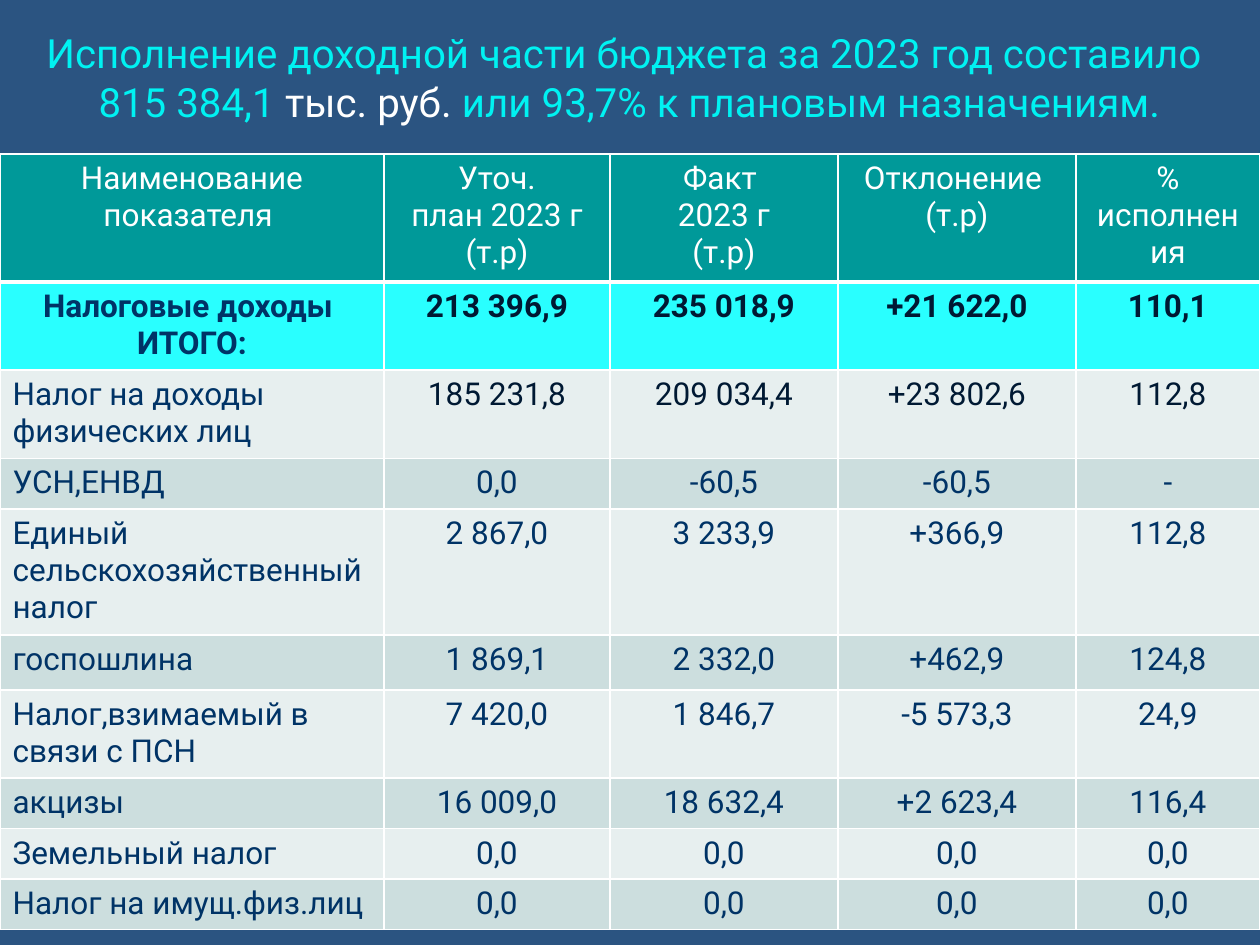
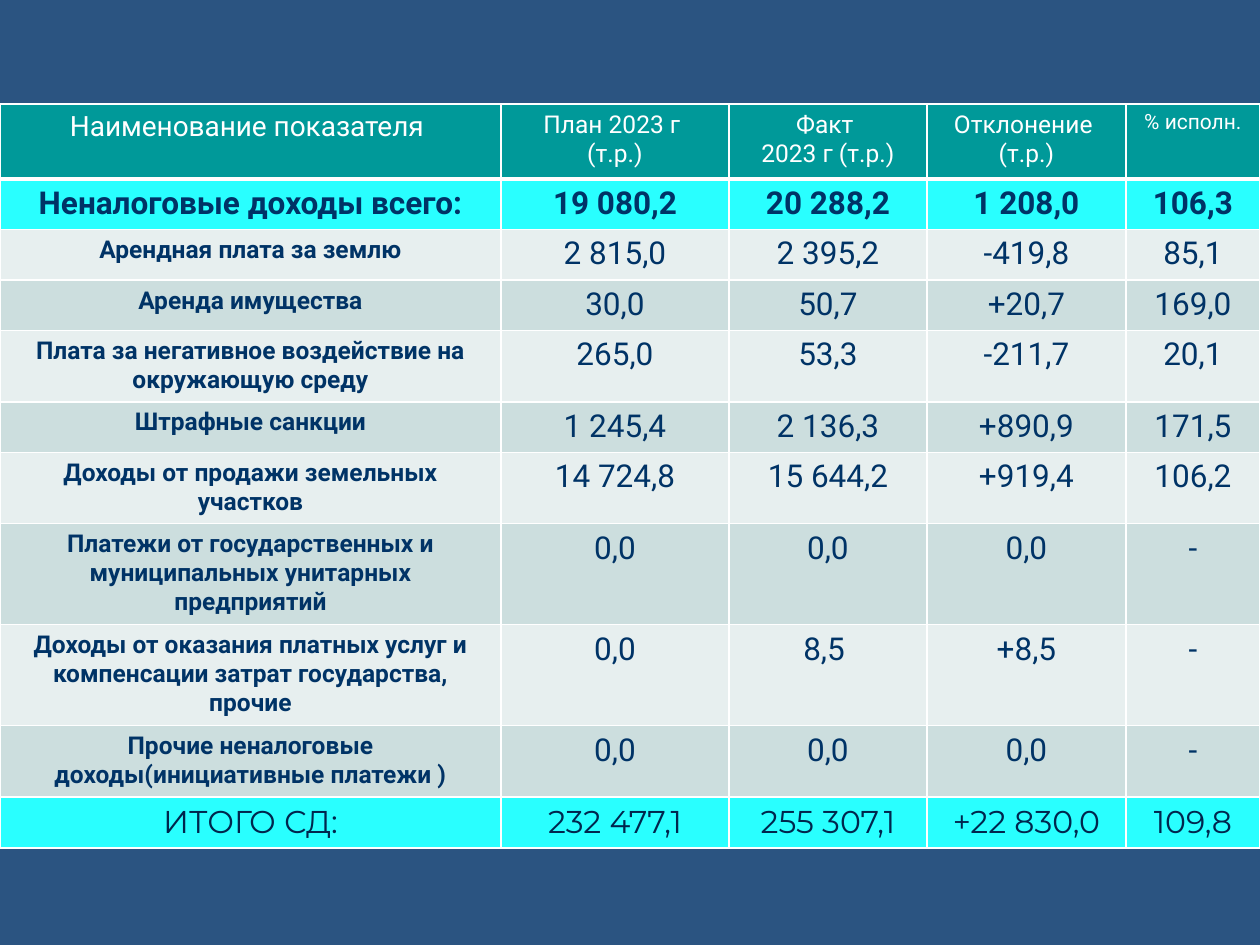
from collections import namedtuple

from lxml import etree
from pptx import Presentation
from pptx import util as u
from pptx.dml.color import RGBColor
from pptx.enum import text
from pptx.oxml.ns import qn

PX = 914400 / 126
PAGE_WIDTH, PAGE_HEIGHT = 1260, 945

BACKGROUND = RGBColor(0x2B, 0x54, 0x81)
HEADER = RGBColor(0x00, 0x99, 0x99)
TOTAL = RGBColor(0x29, 0xFF, 0xFF)
BANDS = (RGBColor(0xE7, 0xEF, 0xEF), RGBColor(0xCC, 0xDE, 0xDE))
WHITE = RGBColor(0xFF, 0xFF, 0xFF)
CYAN = RGBColor(0x00, 0xF2, 0xF2)
NAVY = RGBColor(0x00, 0x33, 0x66)
DARK = RGBColor(0x00, 0x19, 0x33)
DEEP = RGBColor(0x00, 0x26, 0x4D)

LEFT, CENTER = text.PP_ALIGN.LEFT, text.PP_ALIGN.CENTER
Style = namedtuple("Style", "size color bold font align",
                   defaults=(18, NAVY, False, "Roboto", CENTER))
Row = namedtuple("Row", "fill styles texts")

VALUE = Style()
VALUE_DARK = Style(color=DARK)
VALUE_BOLD = Style(bold=True)
VALUE_DARK_BOLD = Style(color=DARK, bold=True)
LABEL_LEFT = Style(align=LEFT)
LABEL_SMALL = Style(size=14, bold=True)
GRAND_TOTAL = Style(color=DEEP, font="Montserrat")

TAX_HEADER = ("Наименование показателя ", "Уточ.\nплан 2023 г (т.р)",
              "Факт \n2023 г\n(т.р)", "Отклонение \n(т.р)", "% исполнения")
TAX_TOTAL = ("Налоговые доходы \nИТОГО:", "213 396,9", "235 018,9", "+21 622,0", "110,1")
TAX_ITEMS = (
    ("Налог на доходы физических лиц", "185 231,8", "209 034,4", "+23 802,6", "112,8"),
    ("УСН,ЕНВД", "0,0", "-60,5", "-60,5", "-"),
    ("Единый сельскохозяйственный налог", "2 867,0", "3 233,9", "+366,9", "112,8"),
    ("госпошлина", "1 869,1", "2 332,0", "+462,9", "124,8"),
    ("Налог,взимаемый в связи с ПСН", "7 420,0", "1 846,7", "-5 573,3", "24,9"),
    ("акцизы", "16 009,0", "18 632,4", "+2 623,4", "116,4"),
    ("Земельный налог", "0,0", "0,0", "0,0", "0,0"),
    ("Налог на имущ.физ.лиц", "0,0", "0,0", "0,0", "0,0"),
)

OTHER_HEADER = ("Наименование показателя ", "План 2023 г \n(т.р.)",
                "Факт \n2023 г (т.р.)", "Отклонение \n(т.р.)", "% исполн.")
OTHER_TOTAL = ("Неналоговые доходы всего:", "19 080,2", "20 288,2", "1 208,0", "106,3")
OTHER_ITEMS = (
    ("Арендная плата за землю", "2 815,0", "2 395,2", "-419,8", "85,1"),
    ("Аренда имущества", "30,0", "50,7", "+20,7", "169,0"),
    ("Плата за негативное воздействие на окружающую среду",
     "265,0", "53,3", "-211,7", "20,1"),
    ("Штрафные санкции", "1 245,4", "2 136,3", "+890,9", "171,5"),
    ("Доходы от продажи земельных участков", "14 724,8", "15 644,2", "+919,4", "106,2"),
    ("Платежи от государственных и муниципальных унитарных предприятий",
     "0,0", "0,0", "0,0", "-"),
    ("Доходы от оказания платных услуг и компенсации затрат государства, прочие",
     "0,0", "8,5 ", "+8,5", "-"),
    ("Прочие неналоговые доходы(инициативные платежи )", "0,0", "0,0", "0,0", "-"),
)
GRAND_TOTAL_TEXTS = ("ИТОГО СД:", "232 477,1", "255 307,1", "+22 830,0", "109,8")


def px(length):
    return u.Emu(round(length * PX))


def add_page(deck):
    page = deck.slides.add_slide(deck.slide_layouts[6])
    page.background.fill.solid()
    page.background.fill.fore_color.rgb = BACKGROUND
    return page


def add_span(para, words, style):
    span = para.add_run()
    span.text = words
    span.font.size = u.Pt(style.size)
    span.font.name = style.font
    span.font.bold = style.bold
    span.font.color.rgb = style.color


def add_title(page, height, lines):
    box = page.shapes.add_textbox(0, 0, px(PAGE_WIDTH), px(height))
    frame = box.text_frame
    frame.word_wrap = True
    frame.vertical_anchor = text.MSO_ANCHOR.MIDDLE
    para = frame.paragraphs[0]
    para.alignment = CENTER
    for number, line in enumerate(lines):
        if number:
            para.add_line_break()
        for words, color in line:
            add_span(para, words, Style(size=23, color=color))


def set_border(cell, side, points):
    properties = cell._tc.get_or_add_tcPr()
    line = etree.SubElement(properties, qn(f"a:ln{side}"), w=str(u.Pt(points)))
    fill = etree.SubElement(line, qn("a:solidFill"))
    etree.SubElement(fill, qn("a:srgbClr"), val=str(WHITE))


def fill_cell(cell, words, style, color, top, bottom):
    for side, points in (("L", 1), ("R", 1), ("T", top), ("B", bottom)):
        set_border(cell, side, points)
    cell.fill.solid()
    cell.fill.fore_color.rgb = color
    frame = cell.text_frame
    for number, line in enumerate(words.split("\n")):
        para = frame.add_paragraph() if number else frame.paragraphs[0]
        para.alignment = style.align
        add_span(para, line, style)


def add_budget_table(page, top, widths, heights, rows):
    frame = page.shapes.add_table(len(rows), len(widths), 0, px(top),
                                  px(sum(widths)), px(sum(heights)))
    table = frame.table
    table.first_row = table.horz_banding = False
    for column, width in zip(table.columns, widths):
        column.width = px(width)
    for number, (line, height, row) in enumerate(zip(table.rows, heights, rows)):
        line.height = px(height)
        top_border = 3 if number == 1 else 1
        bottom_border = 3 if number == 0 else 1
        for cell, words, style in zip(line.cells, row.texts, row.styles):
            fill_cell(cell, words, style, row.fill, top_border, bottom_border)


def label_and_values(label, value):
    return [label] + [value] * 4


def header_row(sizes, texts):
    return Row(HEADER, [Style(size=size, color=WHITE) for size in sizes], texts)


def banded_rows(items, styles):
    return [Row(BANDS[number % 2], styles, texts) for number, texts in enumerate(items)]


def add_tax_page(deck):
    page = add_page(deck)
    add_title(page, 154, (
        [("Исполнение доходной части бюджета за 2023 год составило ", CYAN)],
        [("815 384,1 ", CYAN), ("тыс. руб. ", WHITE),
         ("или 93,7% к плановым назначениям.", CYAN)],
    ))
    items = banded_rows(TAX_ITEMS, label_and_values(LABEL_LEFT, VALUE))
    items[0] = items[0]._replace(styles=label_and_values(LABEL_LEFT, VALUE_DARK))
    total = Row(TOTAL, label_and_values(VALUE_BOLD, VALUE_DARK_BOLD), TAX_TOTAL)
    add_budget_table(page, 154, (384, 226, 228, 238, 184),
                     (128, 86, 87, 50, 124, 55, 87, 50, 49, 49),
                     [header_row([18] * 5, TAX_HEADER), total] + items)


def add_other_income_page(deck):
    page = add_page(deck)
    total = Row(TOTAL, [VALUE_BOLD] * 5, OTHER_TOTAL)
    items = banded_rows(OTHER_ITEMS, label_and_values(LABEL_SMALL, VALUE))
    grand_total = Row(TOTAL, [GRAND_TOTAL] * 5, GRAND_TOTAL_TEXTS)
    add_budget_table(page, 104, (501, 228, 198, 199, 134),
                     (75, 50, 50, 49, 71, 50, 70, 100, 99, 71, 51),
                     [header_row((16, 14, 14, 14, 12), OTHER_HEADER), total]
                     + items + [grand_total])


def main():
    deck = Presentation()
    deck.slide_width, deck.slide_height = px(PAGE_WIDTH), px(PAGE_HEIGHT)
    add_tax_page(deck)
    add_other_income_page(deck)
    deck.save("out.pptx")


if __name__ == "__main__":
    main()
